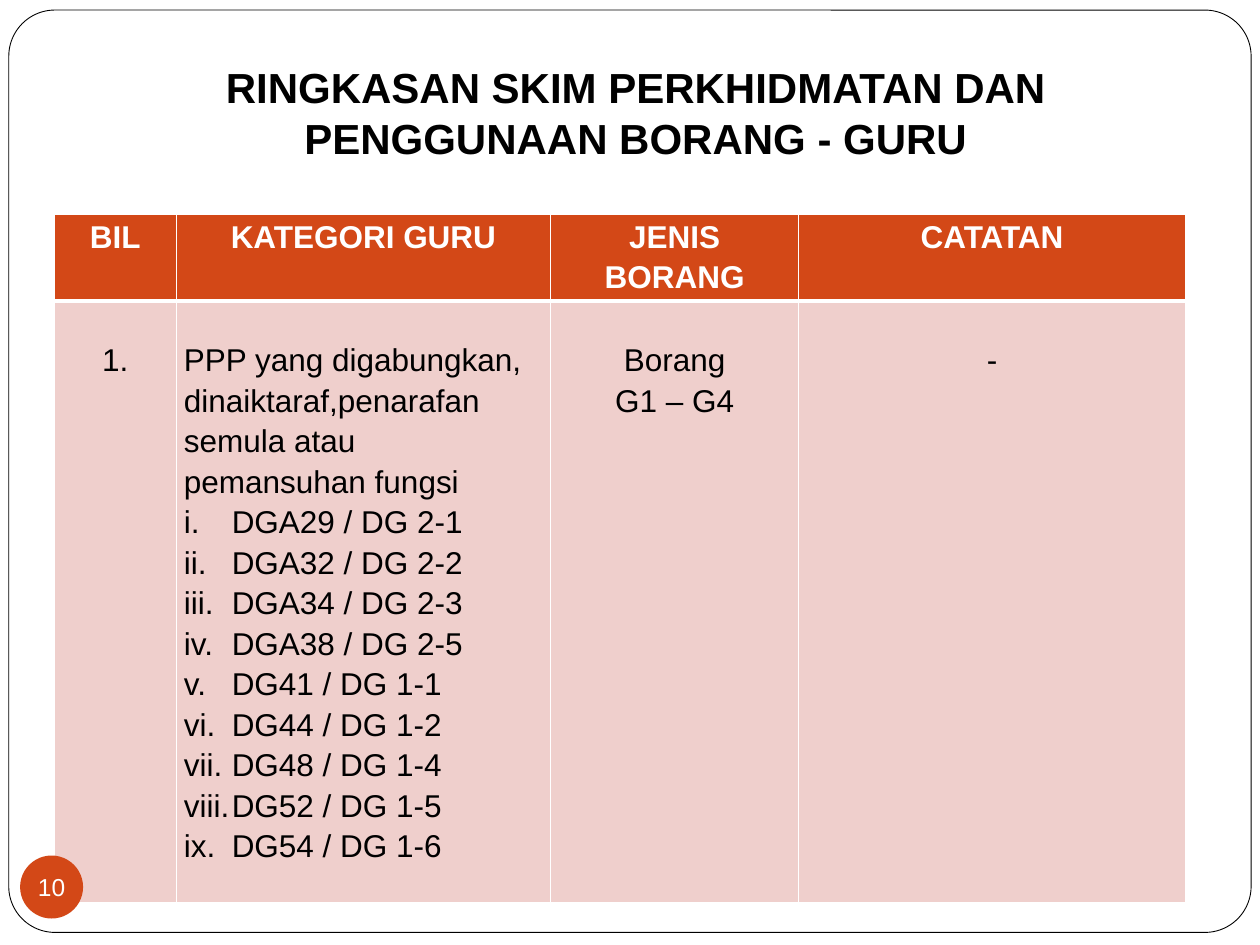
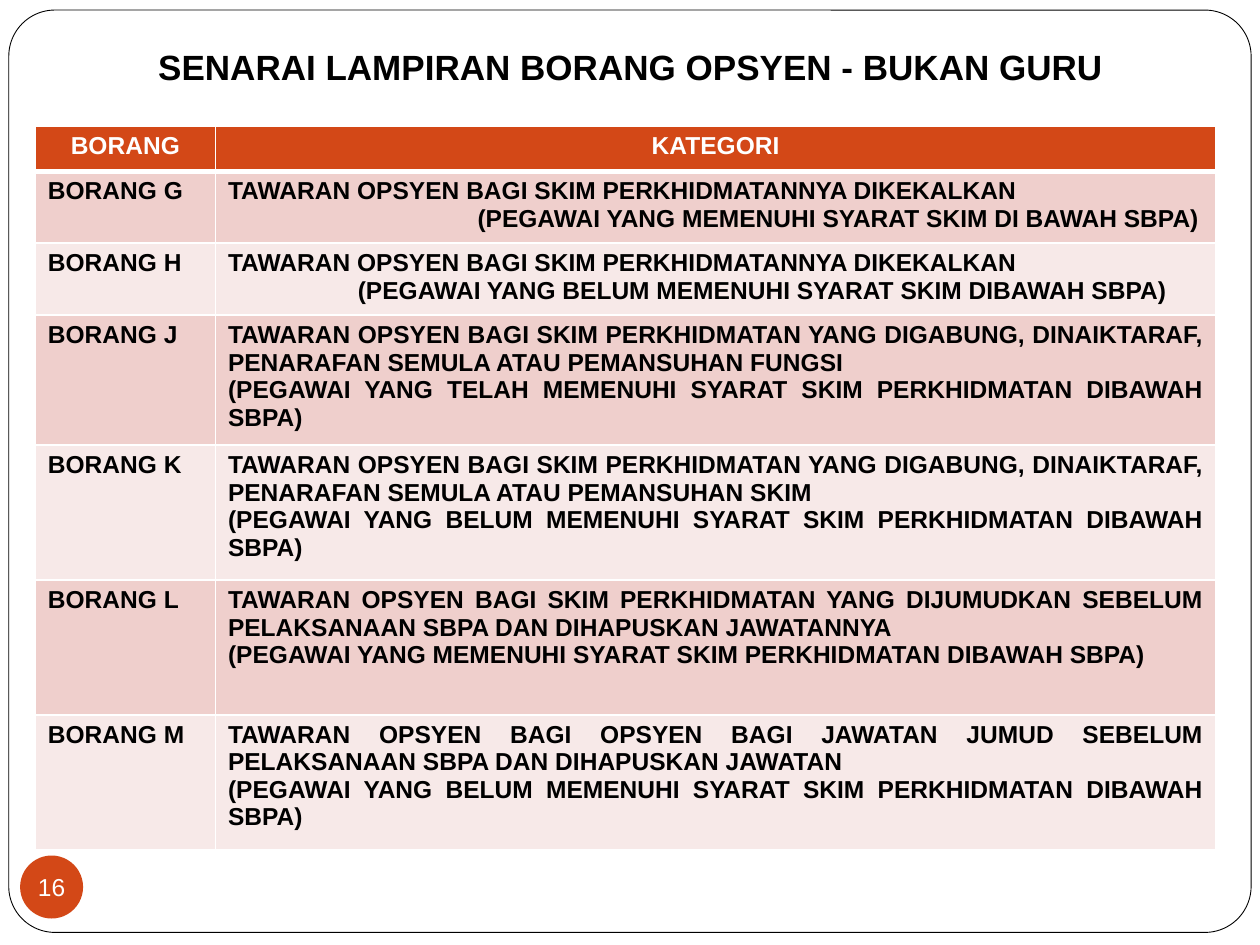
from collections import namedtuple
from dataclasses import dataclass

from lxml.etree import SubElement
from pptx import Presentation
from pptx.dml.color import RGBColor
from pptx.enum.shapes import MSO_SHAPE
from pptx.enum.text import MSO_ANCHOR, PP_ALIGN
from pptx.oxml.ns import qn
from pptx.util import Inches, Pt

Box = namedtuple("Box", "col row cols rows")
Para = namedtuple("Para", "text align indent numbered", defaults=(PP_ALIGN.LEFT, 0, False))

GRID_COLS, GRID_ROWS = 100, 75
SLIDE_W, SLIDE_H = Inches(10), Inches(7.5)
CENTER, JUSTIFY = PP_ALIGN.CENTER, PP_ALIGN.JUSTIFY


@dataclass(frozen=True)
class Theme:
    font: str = "Arial"
    paper: str = "FFFFFF"
    ink: str = "000000"
    accent: str = "D34817"
    bands: tuple = ("EFCFCC", "F7E9E8")
    title: int = 24
    subtitle: int = 20
    body: int = 18
    small: int = 14
    hairline: float = 0.5
    rule: int = 1
    header_rule: int = 3


THEME = Theme()
FRAME = Box(0.7, 0.8, 98.6, 73.2)
BADGE = Box(1.6, 67.9, 5, 5)


def x(cols):
    return round(SLIDE_W * cols / GRID_COLS)


def y(rows):
    return round(SLIDE_H * rows / GRID_ROWS)


def place(box):
    return x(box.col), y(box.row), x(box.cols), y(box.rows)


def add_panel(slide, kind, box, fill, line=None):
    sp = slide.shapes.add_shape(kind, *place(box))
    sp.shadow.inherit = False
    sp.fill.solid()
    sp.fill.fore_color.rgb = RGBColor.from_string(fill)
    if line:
        sp.line.color.rgb = RGBColor.from_string(line)
        sp.line.width = Pt(THEME.hairline)
    else:
        sp.line.fill.background()
    return sp


def write(tf, paras, size, color, bold=False, spacing=None):
    for i, para in enumerate(paras):
        p = tf.paragraphs[0] if i == 0 else tf.add_paragraph()
        p.text = para.text
        p.alignment = para.align
        if spacing:
            p.line_spacing = spacing
        pPr = p._p.get_or_add_pPr()
        if para.indent:
            pPr.set("marL", str(x(para.indent)))
        if para.numbered:
            pPr.set("indent", str(-x(para.indent)))
            SubElement(pPr, qn("a:buFont")).set("typeface", "+mj-lt")
            SubElement(pPr, qn("a:buAutoNum")).set("type", "romanLcPeriod")
        for r in p.runs:
            r.font.name = THEME.font
            r.font.size = Pt(size)
            r.font.bold = bold
            r.font.color.rgb = RGBColor.from_string(color)


def add_title(slide, box, text, size, anchor):
    tf = slide.shapes.add_textbox(*place(box)).text_frame
    tf.word_wrap = True
    tf.vertical_anchor = anchor
    if anchor == MSO_ANCHOR.BOTTOM:
        tf.margin_bottom = y(1)
    write(tf, [Para(text, CENTER)], size, THEME.ink, bold=True)


def add_badge(slide, box, number):
    tf = add_panel(slide, MSO_SHAPE.OVAL, box, THEME.accent).text_frame
    tf.margin_left = tf.margin_right = tf.margin_top = tf.margin_bottom = 0
    tf.word_wrap = False
    tf.vertical_anchor = MSO_ANCHOR.MIDDLE
    write(tf, [Para(str(number), CENTER)], THEME.small, THEME.paper)


def add_base(prs, number):
    slide = prs.slides.add_slide(prs.slide_layouts[6])
    frame = add_panel(slide, MSO_SHAPE.ROUNDED_RECTANGLE, FRAME, THEME.paper, THEME.ink)
    frame.adjustments[0] = 0.05
    return slide, lambda: add_badge(slide, BADGE, number)


def set_borders(cell, top, bottom):
    tcPr = cell._tc.get_or_add_tcPr()
    widths = {"lnL": THEME.rule, "lnR": THEME.rule, "lnT": top, "lnB": bottom}
    for i, (tag, width) in enumerate(widths.items()):
        ln = SubElement(tcPr, qn(f"a:{tag}"), w=str(Pt(width)))
        SubElement(SubElement(ln, qn("a:solidFill")), qn("a:srgbClr")).set("val", THEME.paper)
        tcPr.insert(i, ln)


def add_grid_table(slide, box, col_units, row_units, rows, size, bold_body, spacing=None,
                   margins=None, body_drop=None):
    table = slide.shapes.add_table(len(rows), len(col_units), *place(box)).table
    table.horz_banding = False
    for column, units in zip(table.columns, col_units):
        column.width = round(x(box.cols) * units / sum(col_units))
    for row, units in zip(table.rows, row_units):
        row.height = round(y(box.rows) * units / sum(row_units))
    for i, row in enumerate(rows):
        header = i == 0
        fill = THEME.accent if header else THEME.bands[(i - 1) % 2]
        for j, paras in enumerate(row):
            cell = table.cell(i, j)
            cell.fill.solid()
            cell.fill.fore_color.rgb = RGBColor.from_string(fill)
            set_borders(cell, THEME.header_rule if i == 1 else THEME.rule,
                        THEME.header_rule if header else THEME.rule)
            if margins is not None:
                cell.margin_left = cell.margin_right = x(margins)
                cell.margin_top = cell.margin_bottom = 0
            if body_drop and not header:
                cell.margin_top = y(body_drop)
            write(cell.text_frame, paras, size, THEME.paper if header else THEME.ink,
                  header or bold_body, spacing)


def headings(*labels):
    return [[Para(label, CENTER)] for label in labels]


def build_teacher_summary(prs):
    slide, finish = add_base(prs, 10)
    add_title(slide, Box(5.9, 3, 89.1, 10.9),
              "RINGKASAN SKIM PERKHIDMATAN DAN PENGGUNAAN BORANG - GURU",
              THEME.title, MSO_ANCHOR.BOTTOM)
    grades = ("DGA29 / DG 2-1", "DGA32 / DG 2-2", "DGA34 / DG 2-3", "DGA38 / DG 2-5",
              "DG41 / DG 1-1", "DG44 / DG 1-2", "DG48 / DG 1-4", "DG52 / DG 1-5",
              "DG54 / DG 1-6")
    category = [Para("PPP yang digabungkan, dinaiktaraf,penarafan semula atau "
                     "pemansuhan fungsi")]
    category += [Para(grade, JUSTIFY, 3.8, True) for grade in grades]
    rows = [
        headings("BIL", "KATEGORI GURU", "JENIS BORANG", "CATATAN"),
        [[Para("1.", CENTER)], category,
         [Para("Borang", CENTER), Para("G1 – G4", CENTER)], [Para("-", CENTER)]],
    ]
    add_grid_table(slide, Box(4.3, 17, 89.8, 51), (9.7, 29.7, 19.7, 30.7), (6.4, 44.6),
                   rows, THEME.body, False, spacing=1.15, margins=0.6, body_drop=2.9)
    finish()


def build_form_list(prs):
    slide, finish = add_base(prs, 16)
    add_title(slide, Box(5.5, 3.1, 89.1, 4.4),
              "SENARAI LAMPIRAN BORANG OPSYEN - BUKAN GURU",
              THEME.subtitle, MSO_ANCHOR.TOP)
    offer = "TAWARAN OPSYEN BAGI "
    kept = offer + "SKIM PERKHIDMATANNYA DIKEKALKAN"
    merged = offer + ("SKIM PERKHIDMATAN YANG DIGABUNG, DINAIKTARAF, "
                      "PENARAFAN SEMULA ATAU PEMANSUHAN ")
    unmet = "(PEGAWAI YANG BELUM MEMENUHI SYARAT SKIM PERKHIDMATAN DIBAWAH SBPA)"
    forms = {
        "G": [Para(kept),
              Para("(PEGAWAI YANG MEMENUHI SYARAT SKIM DI BAWAH SBPA)", indent=19.8)],
        "H": [Para(kept),
              Para("(PEGAWAI YANG BELUM MEMENUHI SYARAT SKIM DIBAWAH SBPA)", indent=10.3)],
        "J": [Para(merged + "FUNGSI", JUSTIFY),
              Para("(PEGAWAI YANG TELAH MEMENUHI SYARAT SKIM PERKHIDMATAN DIBAWAH SBPA)",
                   JUSTIFY)],
        "K": [Para(merged + "SKIM", JUSTIFY), Para(unmet, JUSTIFY)],
        "L": [Para(offer + "SKIM PERKHIDMATAN YANG DIJUMUDKAN SEBELUM "
                           "PELAKSANAAN SBPA DAN DIHAPUSKAN JAWATANNYA", JUSTIFY),
              Para("(PEGAWAI YANG MEMENUHI SYARAT SKIM PERKHIDMATAN DIBAWAH SBPA)",
                   JUSTIFY)],
        "M": [Para(offer + "OPSYEN BAGI JAWATAN JUMUD SEBELUM "
                           "PELAKSANAAN SBPA DAN DIHAPUSKAN JAWATAN", JUSTIFY),
              Para(unmet, JUSTIFY)],
    }
    rows = [headings("BORANG", "KATEGORI")]
    rows += [[[Para(f"BORANG {letter}")], paras] for letter, paras in forms.items()]
    add_grid_table(slide, Box(2.8, 10, 93.7, 57.4), (14.3, 79.4),
                   (3.6, 5.7, 5.7, 10.3, 10.7, 10.7, 10.7), rows, THEME.small, True)
    finish()


def main():
    prs = Presentation()
    prs.slide_width, prs.slide_height = SLIDE_W, SLIDE_H
    build_teacher_summary(prs)
    build_form_list(prs)
    prs.save("out.pptx")


if __name__ == "__main__":
    main()
